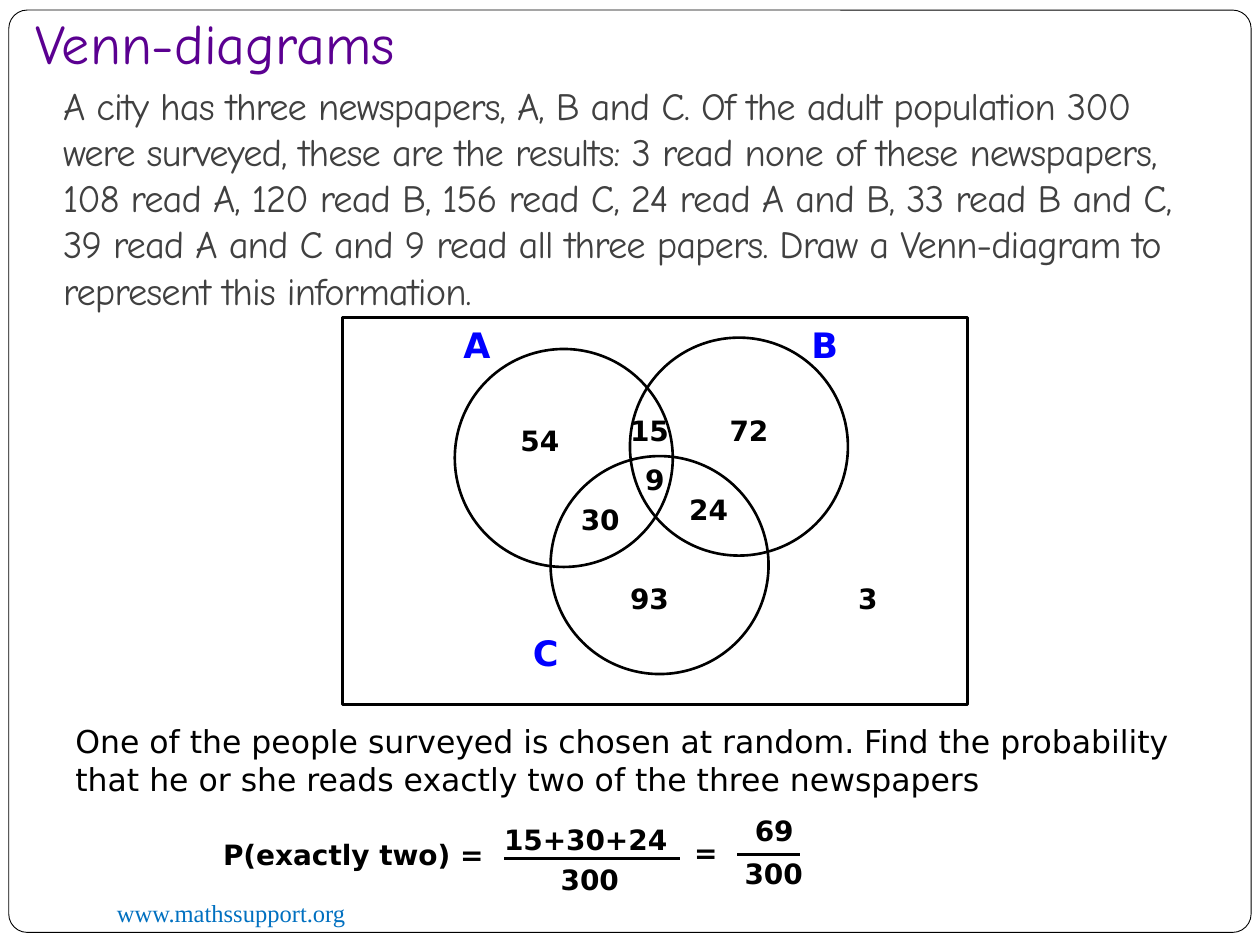
from lxml import etree
from pptx import Presentation
from pptx.dml.color import RGBColor
from pptx.enum.shapes import MSO_CONNECTOR, MSO_SHAPE
from pptx.enum.text import MSO_ANCHOR, MSO_AUTO_SIZE, PP_ALIGN
from pptx.oxml.ns import qn
from pptx.util import Inches, Pt

RECTANGLE = MSO_SHAPE.RECTANGLE
ROUNDED = MSO_SHAPE.ROUNDED_RECTANGLE
OVAL = MSO_SHAPE.OVAL
STRAIGHT = MSO_CONNECTOR.STRAIGHT
GROW = MSO_AUTO_SIZE.SHAPE_TO_FIT_TEXT

BLACK = RGBColor(0x00, 0x00, 0x00)
WHITE = RGBColor(0xFF, 0xFF, 0xFF)
BLUE = RGBColor(0x00, 0x00, 0xFF)
LINK_BLUE = RGBColor(0x00, 0x70, 0xC0)
PURPLE = RGBColor(0x5B, 0x00, 0x91)
GRAY = RGBColor(0x40, 0x40, 0x40)

HEADING_FONT = "Comic Neue"
TEXT_FONT = "DejaVu Sans"

presentation = Presentation()
presentation.slide_width = Inches(10)
presentation.slide_height = Inches(7.5)
slide = presentation.slides.add_slide(presentation.slide_layouts[1])
shapes = slide.shapes


def add_outline(kind, left, top, width, height, line_width):
    shape = shapes.add_shape(kind, Inches(left), Inches(top), Inches(width), Inches(height))
    shape.shadow.inherit = False
    shape.fill.background()
    shape.line.color.rgb = BLACK
    shape.line.width = Pt(line_width)
    return shape


def add_text(text, left, top, width, height, size=16, color=BLACK, bold=True,
             font=TEXT_FONT, side_inset=0.0, wrap=True):
    box = shapes.add_textbox(Inches(left), Inches(top), Inches(width), Inches(height))
    frame = box.text_frame
    frame.word_wrap = wrap
    frame.auto_size = GROW
    frame.margin_left = frame.margin_right = Inches(side_inset)
    paragraph = frame.paragraphs[0]
    paragraph.text = text
    paragraph.font.name = font
    paragraph.font.size = Pt(size)
    paragraph.font.bold = bold
    paragraph.font.color.rgb = color


# Page frame, behind everything else
page_frame = add_outline(ROUNDED, 0.07, 0.08, 9.86, 7.32, 0.5)
page_frame.adjustments[0] = 0.02
page_frame.fill.solid()
page_frame.fill.fore_color.rgb = WHITE
shapes._spTree.insert(2, page_frame._element)
add_text("www.mathssupport.org", 0.83, 7.08, 3.25, 0.34, size=14, color=LINK_BLUE,
         bold=False, font="Times New Roman", side_inset=0.1)

# Title and problem
title, problem = shapes.title, slide.placeholders[1]
title.text = "Venn-diagrams"
problem.text = (
    "A city has three newspapers, A, B and C. Of the adult population 300 were surveyed, "
    "these are the results: 3 read none of these newspapers, 108 read A, 120 read B, "
    "156 read C, 24 read A and B, 33 read B and C, 39 read A and C and 9 read all three "
    "papers. Draw a Venn-diagram to represent this information."
)
for placeholder, bounds, size, color, anchor in (
    (title, (0.18, 0, 8.5, 0.67), 32, PURPLE, MSO_ANCHOR.MIDDLE),
    (problem, (0.4, 0.6, 9.29, 1.95), 22, GRAY, MSO_ANCHOR.TOP),
):
    placeholder.left, placeholder.top, placeholder.width, placeholder.height = map(Inches, bounds)
    frame = placeholder.text_frame
    frame.auto_size = MSO_AUTO_SIZE.NONE
    frame.vertical_anchor = anchor
    paragraph = frame.paragraphs[0]
    properties = paragraph._p.get_or_add_pPr()
    properties.set("marL", "0")
    properties.set("indent", "0")
    etree.SubElement(properties, qn("a:buNone"))
    paragraph.alignment = PP_ALIGN.LEFT
    paragraph.space_before = Pt(0)
    paragraph.font.name = HEADING_FONT
    paragraph.font.size = Pt(size)
    paragraph.font.color.rgb = color
problem.text_frame.paragraphs[0].runs[0].font._element.set("spc", "-50")

# Venn diagram: universe, sets with their names, and counts
DIAMETER = 1.73
add_outline(RECTANGLE, 2.72, 2.52, 4.96, 3.07, 2)
for name, left, top, name_left, name_top in (
    ("A", 3.61, 2.77, 3.58, 2.52),
    ("B", 5, 2.68, 6.34, 2.52),
    ("C", 4.37, 3.62, 4.13, 4.96),
):
    add_outline(OVAL, left, top, DIAMETER, DIAMETER, 1.5)
    add_text(name, name_left, name_top, 0.42, 0.44, size=20, color=BLUE,
             side_inset=0.1, wrap=False)

for count, left, top in (
    ("9", 5.12, 3.62), ("30", 4.61, 3.94), ("24", 5.47, 3.86), ("15", 5, 3.23),
    ("93", 5, 4.57), ("72", 5.79, 3.23), ("54", 4.13, 3.31), ("3", 6.81, 4.57),
):
    add_text(count, left, top, 0.39, 0.37)

# Question and answer
add_text("One of the people surveyed is chosen at random. Find the probability that he or she "
         "reads exactly two of the three newspapers",
         0.5, 5.68, 9.02, 0.71, size=18, bold=False, side_inset=0.1)

for text, left, top, width in (
    ("P(exactly two) =", 1.77, 6.6, 2.22),
    ("15+30+24", 4, 6.48, 1.39),
    ("300", 4.45, 6.8, 0.63),
    ("=", 5.51, 6.58, 0.4),
    ("69", 5.99, 6.41, 0.48),
    ("300", 5.91, 6.75, 0.63),
):
    add_text(text, left, top, width, 0.37)

for start, end, height in ((4, 5.4, 6.81), (5.85, 6.35, 6.78)):
    bar = shapes.add_connector(STRAIGHT, Inches(start), Inches(height), Inches(end), Inches(height))
    bar.line.color.rgb = BLACK
    bar.line.width = Pt(1.75)
    etree.SubElement(bar._element.spPr, qn("a:effectLst"))

presentation.save("out.pptx")
